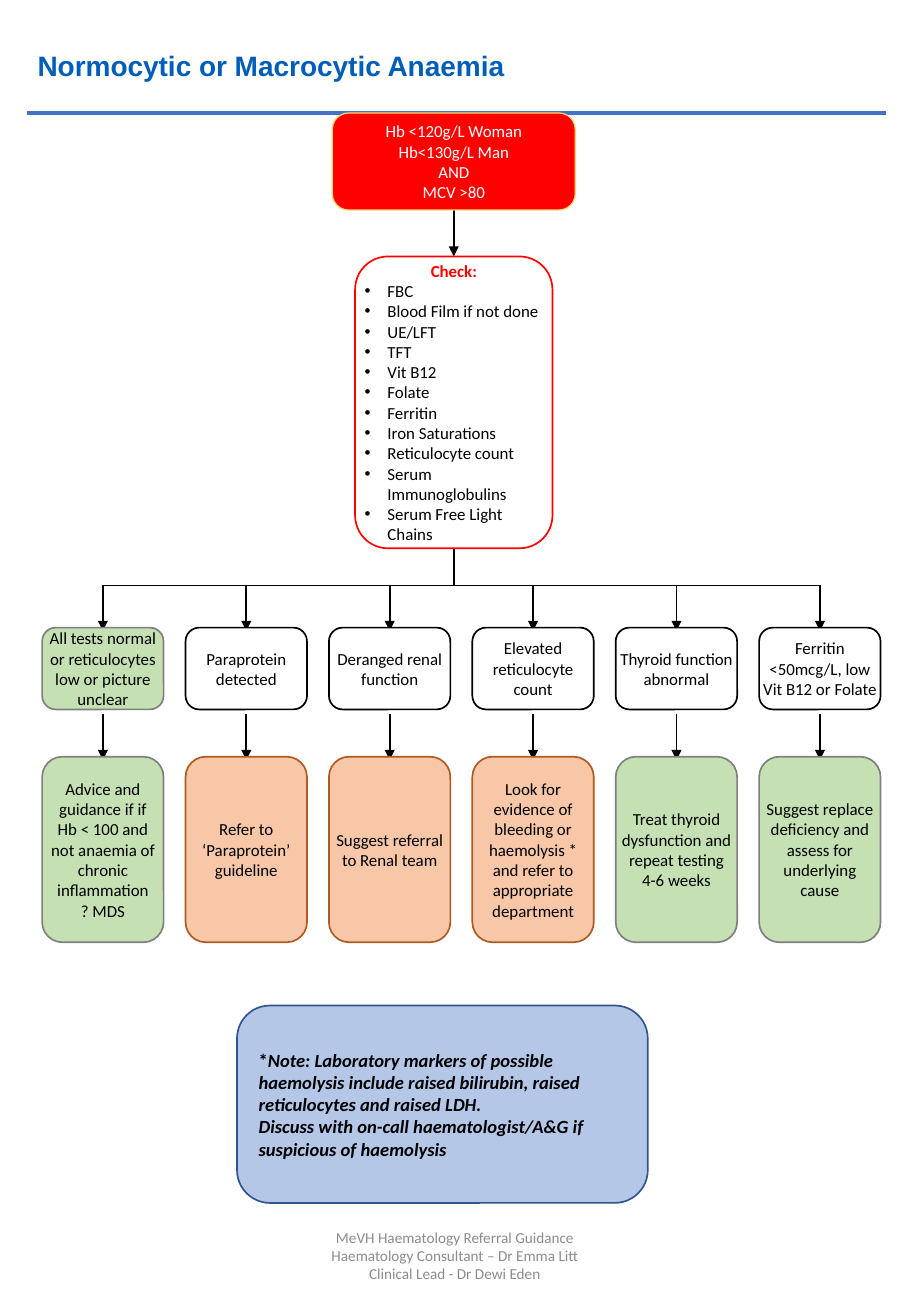
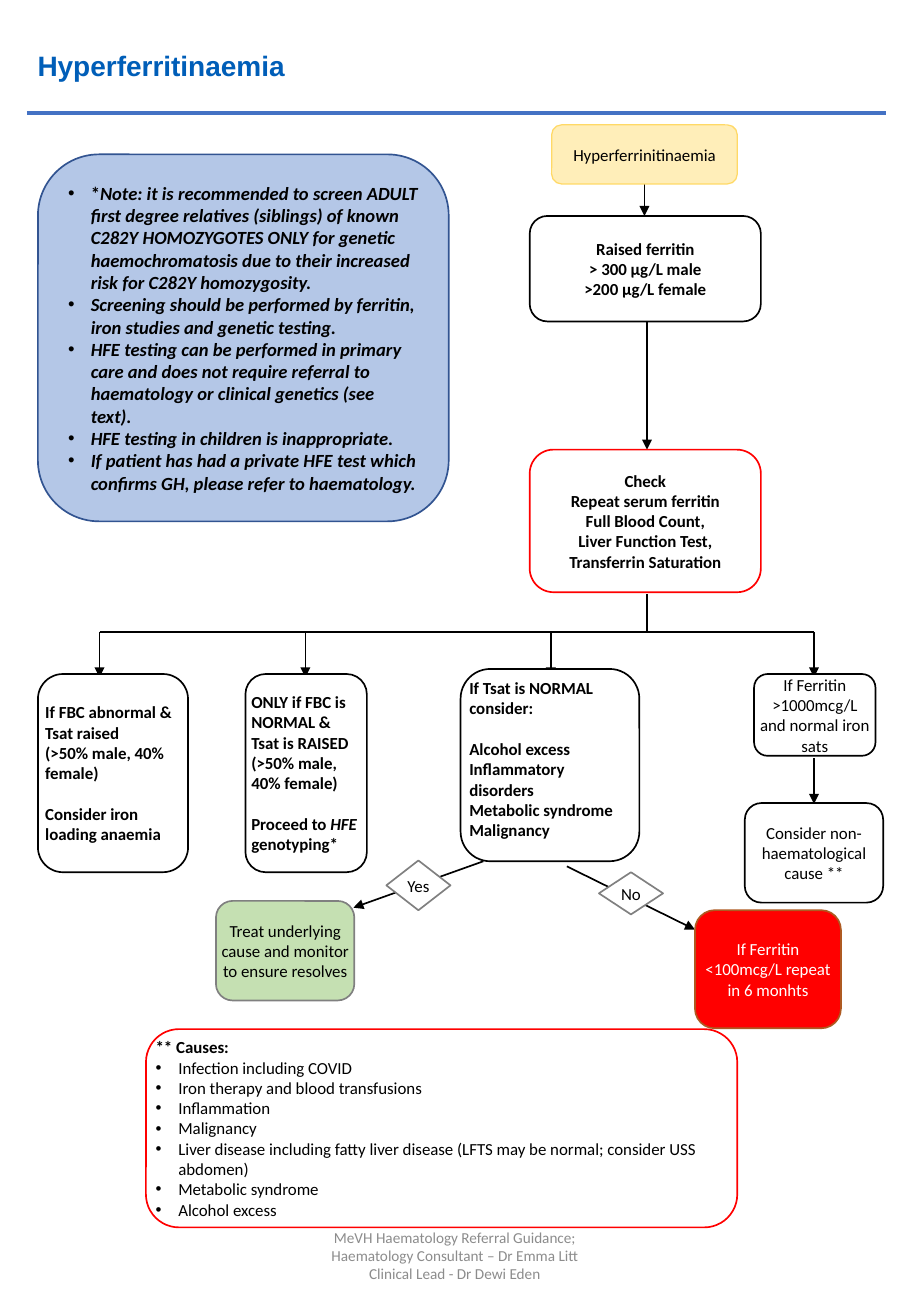
from dataclasses import dataclass

from lxml import etree
from pptx import Presentation
from pptx import util as u
from pptx.dml.color import RGBColor
from pptx.enum import shapes, text
from pptx.oxml.ns import qn


@dataclass(frozen=True)
class Theme:
    heading_font: str = "Arial"
    body_font: str = "Calibri"
    title_size: float = 16.6
    card_size: float = 10
    note_size: float = 11
    footer_size: float = 9
    title: str = "005EB8"
    rule: str = "4472C4"
    footer: str = "8C8C8C"
    black: str = "000000"
    white: str = "FFFFFF"
    red: str = "FF0000"
    grey: str = "808080"
    green: str = "C5E0B2"
    orange: str = "F7C7A7"
    brown: str = "AE5A21"
    yellow: str = "FFD966"
    cream: str = "FFEEB9"
    blue: str = "B4C7E7"
    navy: str = "325491"


theme = Theme()
LEFT, CENTER = text.PP_ALIGN.LEFT, text.PP_ALIGN.CENTER
TOP, MIDDLE = text.MSO_ANCHOR.TOP, text.MSO_ANCHOR.MIDDLE
ROUNDED, DIAMOND = shapes.MSO_SHAPE.ROUNDED_RECTANGLE, shapes.MSO_SHAPE.DIAMOND
CORNER_INSET = 0.0488
BULLET_INDENT = 13.5
GAP = {"gap": 12.2}


def write(shape, paragraphs, margins=(0, 0), anchor=MIDDLE, **look):
    frame = shape.text_frame
    side, edge = (u.Pt(margin) for margin in margins)
    frame_format = {
        "word_wrap": True, "auto_size": text.MSO_AUTO_SIZE.NONE, "vertical_anchor": anchor,
        "margin_left": side, "margin_right": side, "margin_top": edge, "margin_bottom": edge,
    }
    for name, value in frame_format.items():
        setattr(frame, name, value)
    for index, item in enumerate(paragraphs):
        wording, changes = (item, {}) if isinstance(item, str) else item
        style = {"font": theme.body_font, "size": theme.card_size, "color": theme.black,
                 "bold": False, "align": CENTER, "gap": 0, "bullet": False, **look, **changes}
        paragraph = frame.add_paragraph() if index else frame.paragraphs[0]
        paragraph.alignment = style["align"]
        paragraph.space_before = u.Pt(style["gap"])
        properties = paragraph._p.get_or_add_pPr()
        indent = u.Pt(BULLET_INDENT) if style["bullet"] else 0
        properties.set("marL", str(indent))
        properties.set("indent", str(-indent))
        if not style["bullet"]:
            etree.SubElement(properties, qn("a:buNone"))
        for position, piece in enumerate(wording.split("_")):
            if piece:
                run = paragraph.add_run()
                run.text = piece
                run_format = {"name": style["font"], "size": u.Pt(style["size"]),
                              "bold": style["bold"], "italic": position % 2 == 1}
                for name, value in run_format.items():
                    setattr(run.font, name, value)
                run.font.color.rgb = RGBColor.from_string(style["color"])


card_colours = {
    "plain": (theme.white, theme.black, 1),
    "check": (theme.white, theme.red, 1),
    "choice": (theme.white, theme.grey, 1),
    "manage": (theme.green, theme.grey, 1),
    "refer": (theme.orange, theme.brown, 1),
    "start": (theme.red, theme.yellow, 0.75),
    "topic": (theme.cream, theme.yellow, 0.75),
    "repeat": (theme.red, theme.brown, 1),
    "note": (theme.blue, theme.navy, 1),
}
bold_left = {"bold": True, "align": LEFT}
note_look = {"size": theme.note_size, "margins": (7.2, 3.6), **bold_left}
bullet_list = {"bullet": True, "align": LEFT}
plain_heading = {"bullet": False, "bold": True}

anaemia_lines = [
    (269, 124.5, 269, 152, True),
    (269, 325, 269, 347, False),
    (61, 347, 486, 347, False),
]
anaemia_cards = [
    ("start", ROUNDED, (197, 67, 144, 57.5),
     ["Hb <120g/L Woman", "Hb<130g/L Man", "AND", "MCV >80"], {"color": theme.white}),
    ("check", ROUNDED, (210.5, 152, 117, 173),
     [("Check:", {**plain_heading, "color": theme.red, "align": CENTER}),
      "FBC", "Blood Film if not done", "UE/LFT", "TFT", "Vit B12", "Folate", "Ferritin",
      "Iron Saturations", "Reticulocyte count", "Serum Immunoglobulins",
      "Serum Free Light Chains"], bullet_list),
    ("note", ROUNDED, (140.5, 596, 243.5, 117),
     ["*_Note: Laboratory markers of possible haemolysis include raised bilirubin, "
      "raised reticulocytes and raised LDH.",
      "_Discuss with on-call haematologist/A&G if suspicious of haemolysis"], note_look),
]
pathways = [
    ("manage", "All tests normal or reticulocytes low or picture unclear",
     "manage", ["Advice and guidance if if Hb < 100 and not anaemia of chronic inflammation",
                "? MDS"]),
    ("plain", "Paraprotein detected", "refer", ["Refer to ‘Paraprotein’ guideline"]),
    ("plain", "Deranged renal function", "refer", ["Suggest referral to Renal team"]),
    ("plain", "Elevated reticulocyte count", "refer",
     ["Look for evidence of bleeding or haemolysis * and refer to appropriate department"]),
    ("plain", "Thyroid function abnormal", "manage",
     ["Treat thyroid dysfunction and repeat testing 4-6 weeks"]),
    ("plain", "Ferritin <50mcg/L, low Vit B12 or Folate", "manage",
     ["Suggest replace deficiency and assess for underlying cause"]),
]
for column, (finding_kind, finding, action_kind, action) in enumerate(pathways):
    left = 25 + 85 * column
    center = left + 36
    anaemia_lines += [(center, 347, center, 374, True), (center, 423, center, 450.5, True)]
    anaemia_cards += [
        (finding_kind, ROUNDED, (left, 372, 72, 48.5), [finding], {}),
        (action_kind, ROUNDED, (left, 448.5, 72, 110), action, {}),
    ]

ferritin_lines = [
    (382, 109, 382, 128, True),
    (383.5, 190.5, 383.5, 266.5, True),
    (383.5, 352, 383.5, 374.5, False),
    (59, 374.5, 482.5, 374.5, False),
    (482.5, 449.5, 482.5, 476.5, True),
    (286.5, 510.5, 209.5, 538, True),
    (336, 513.5, 412, 551, True),
]
ferritin_lines += [(x, 374.5, x, 401.5, True) for x in (59, 181, 326.5, 482.5)]
ferritin_cards = [
    ("topic", ROUNDED, (327, 74, 110, 35), ["Hyperferrinitinaemia"], {}),
    ("plain", ROUNDED, (314, 128, 137, 62.5),
     ["Raised ferritin", "> 300 μg/L male", ">200 μg/L female"], {"bold": True}),
    ("check", ROUNDED, (314, 266.5, 137, 84.5),
     ["Check", "Repeat serum ferritin", "Full Blood Count,", "Liver Function Test,",
      "Transferrin Saturation"], {"bold": True}),
    ("plain", ROUNDED, (22.5, 399.5, 89, 117.5),
     ["If FBC abnormal & Tsat raised", "(>50% male, 40% female)",
      ("Consider iron loading anaemia", GAP)], bold_left),
    ("plain", ROUNDED, (145.5, 399.5, 72, 117.5),
     ["ONLY if FBC is NORMAL &", "Tsat is RAISED", "(>50% male, 40% female)",
      ("Proceed to _HFE_ genotyping*", GAP)], bold_left),
    ("plain", ROUNDED, (273, 396.5, 106, 114),
     ["If Tsat is NORMAL consider:", ("Alcohol excess", GAP), "Inflammatory disorders",
      "Metabolic syndrome", "Malignancy"], {**bold_left, "anchor": TOP}),
    ("plain", ROUNDED, (447, 399.5, 72, 48.5),
     ["If Ferritin >1000mcg/L and normal iron sats"], {}),
    ("plain", ROUNDED, (441.5, 476, 82, 59), ["Consider non-haematological cause **"], {}),
    ("manage", ROUNDED, (128, 534, 82, 59),
     ["Treat underlying cause and monitor to ensure resolves"], {}),
    ("repeat", ROUNDED, (412, 539.5, 86.5, 70),
     ["If Ferritin <100mcg/L repeat in 6 monhts"], {"color": theme.white}),
    ("choice", DIAMOND, (355, 517, 38, 25), ["No"], {}),
    ("choice", DIAMOND, (229, 510, 38, 29.5), ["Yes"], {}),
    ("note", ROUNDED, (22.5, 91.5, 243.5, 217.5),
     ["*_Note: it is recommended to screen ADULT first degree relatives (siblings) of known "
      "C282Y HOMOZYGOTES ONLY for genetic haemochromatosis due to their increased risk for "
      "C282Y homozygosity.",
      "_Screening should be performed by ferritin, iron studies and genetic testing.",
      "_HFE testing can be performed in primary care and does not require referral to "
      "haematology or clinical genetics (see text).",
      "_HFE testing in children is inappropriate.",
      "_If patient has had a private HFE test which confirms GH, please refer to haematology."],
     {**note_look, "bullet": True}),
    ("check", ROUNDED, (86.5, 610, 350.5, 117.5),
     [("** Causes:", plain_heading), "Infection including COVID",
      "Iron therapy and blood transfusions", "Inflammation", "Malignancy",
      "Liver disease including fatty liver disease (LFTS may be normal; consider USS abdomen)",
      "Metabolic syndrome", "Alcohol excess"], bullet_list),
]

pages = [
    ("Title and Content", "Normocytic or Macrocytic Anaemia", anaemia_lines, anaemia_cards,
     ["MeVH Haematology Referral Guidance",
      "Haematology Consultant – Dr Emma Litt Clinical Lead - Dr Dewi Eden"]),
    ("Two Content", "Hyperferritinaemia", ferritin_lines, ferritin_cards,
     ["MeVH Haematology Referral Guidance; Haematology Consultant – Dr Emma Litt",
      "Clinical Lead - Dr Dewi Eden"]),
]

presentation = Presentation()
presentation.slide_width, presentation.slide_height = u.Pt(540), u.Pt(780)

for layout_name, title, lines, cards, footer in pages:
    slide = presentation.slides.add_slide(presentation.slide_layouts.get_by_name(layout_name))
    heading = slide.shapes.title
    bodies = iter([holder for holder in slide.placeholders
                   if holder.placeholder_format.idx > 0])
    title_box = {"left": 16.5, "top": 15, "width": 377.5, "height": 48}
    for name, value in title_box.items():
        setattr(heading, name, u.Pt(value))
    write(heading, [title], (5.76, 2.88), font=theme.heading_font, size=theme.title_size,
          color=theme.title, bold=True, align=LEFT)

    rule = (16, 67, 525, 67, False)
    for line in [rule, *lines]:
        *ends, arrow = line
        connector = slide.shapes.add_connector(
            shapes.MSO_CONNECTOR.STRAIGHT, *(u.Pt(end) for end in ends))
        connector.line.width = u.Pt(2.75 if line is rule else 1)
        connector.line.color.rgb = RGBColor.from_string(
            theme.rule if line is rule else theme.black)
        properties = connector.element.spPr
        if arrow:
            etree.SubElement(properties.find(qn("a:ln")), qn("a:tailEnd"), type="triangle")
        etree.SubElement(properties, qn("a:effectLst"))

    for kind, outline, box, paragraphs, look in cards:
        fill, border, border_width = card_colours[kind]
        card = slide.shapes.add_shape(outline, *(u.Pt(value) for value in box))
        card.shadow.inherit = False
        card.fill.solid()
        card.fill.fore_color.rgb = RGBColor.from_string(fill)
        card.line.color.rgb = RGBColor.from_string(border)
        card.line.width = u.Pt(border_width)
        if look.get("bullet"):
            body = next(bodies)
            for name in ("left", "top", "width", "height"):
                setattr(body, name, getattr(card, name))
            card.element.addnext(body.element)
            side = look.get("margins", (0, 0))[0] + CORNER_INSET * min(box[2:])
            write(body, paragraphs, **{**look, "margins": (side, 0)})
        else:
            write(card, paragraphs, **look)

    credits = slide.shapes.add_textbox(u.Pt(178.5), u.Pt(723), u.Pt(182), u.Pt(42))
    write(credits, footer, (7.2, 3.6), size=theme.footer_size, color=theme.footer)

presentation.save("out.pptx")
